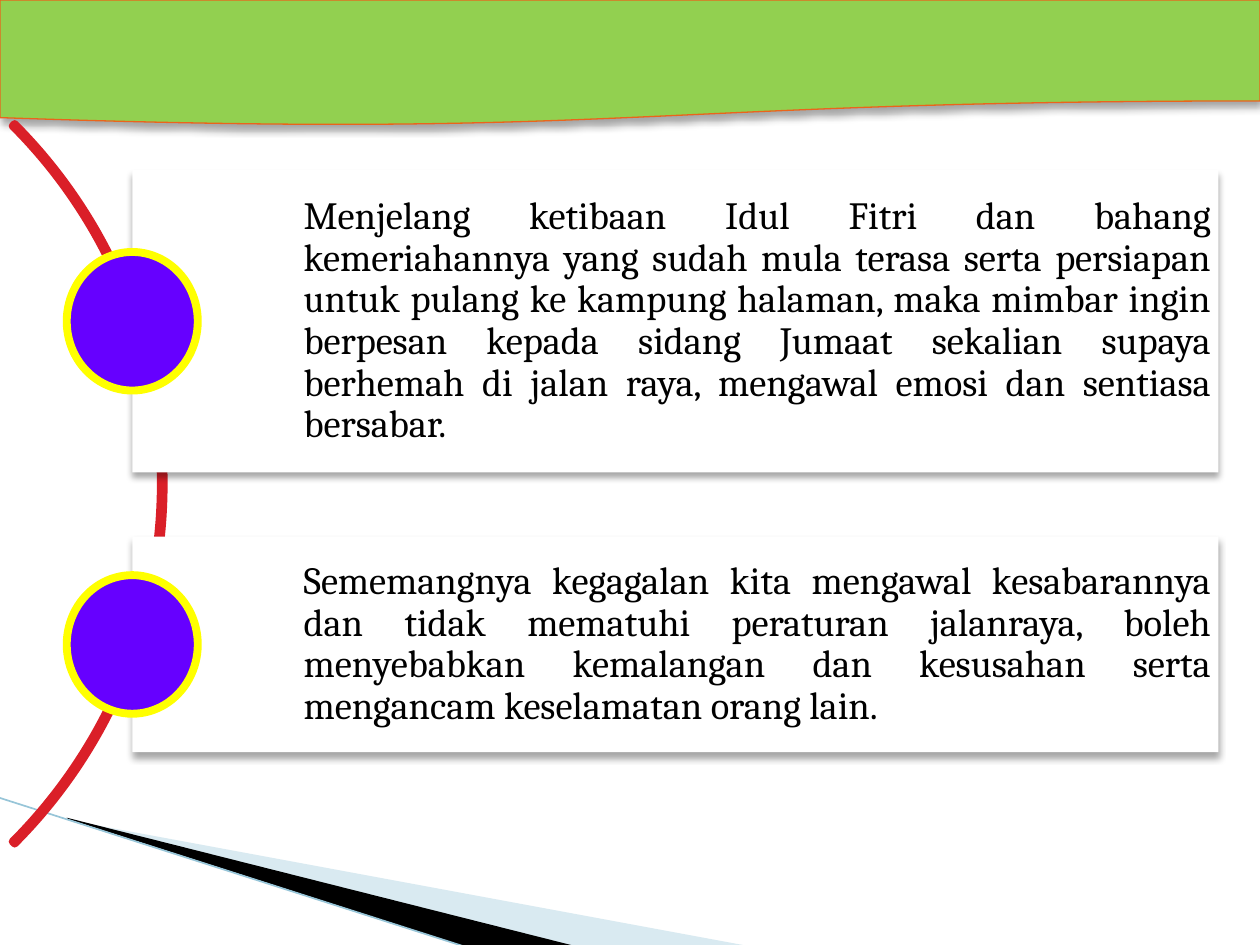
"""Build the Friday sermon slide with two road-safety messages."""
from dataclasses import dataclass

from lxml.etree import SubElement
from pptx import Presentation
from pptx.dml.color import RGBColor
from pptx.enum.shapes import MSO_CONNECTOR, MSO_SHAPE
from pptx.enum.text import MSO_ANCHOR, PP_ALIGN
from pptx.oxml.ns import qn
from pptx.shapes.autoshape import Shape
from pptx.slide import Slide
from pptx.util import Inches, Pt

COLORS = {
    "banner": "92D050", "banner_line": "EB641B", "arc": "DA1F28",
    "panel": "FFFFFF", "text": "000000", "dot": "6600FF", "ring": "FFFF00",
    "pale": "A0CBDC", "dark": "000000", "edge": "97C5D8", "shadow": "000000",
}
FRAME = {
    "word_wrap": True, "vertical_anchor": MSO_ANCHOR.MIDDLE,
    "margin_left": Inches(1.36), "margin_top": Inches(0.06),
    "margin_right": Inches(0.06), "margin_bottom": Inches(0.06),
}
PARAGRAPH = {"alignment": PP_ALIGN.JUSTIFY, "line_spacing": 0.9, "space_after": Pt(7.7)}
FONT = {"name": "Cambria", "size": Pt(22)}
PANEL_LEFT, PANEL_WIDTH = 1.05, 8.62
DOT_WIDTH, DOT_HEIGHT = 1.04, 1.1


@dataclass
class Message:
    top: float
    height: float
    text: str


@dataclass
class Wedge:
    points: list[tuple[float, float]]
    color: str
    alpha: int = 100


MESSAGES = [
    Message(1.35, 2.4, "Menjelang ketibaan Idul Fitri dan bahang kemeriahannya yang sudah "
            "mula terasa serta persiapan untuk pulang ke kampung halaman, maka mimbar ingin "
            "berpesan kepada sidang Jumaat sekalian supaya berhemah di jalan raya, mengawal "
            "emosi dan sentiasa bersabar."),
    Message(4.26, 1.71, "Sememangnya kegagalan kita mengawal kesabarannya dan tidak mematuhi "
            "peraturan jalanraya, boleh menyebabkan kemalangan dan kesusahan serta mengancam "
            "keselamatan orang lain."),
]
WEDGES = [
    Wedge([(0.55, 6.51), (5.95, 7.51), (4.56, 7.51), (0.55, 6.5)], "pale", 40),
    Wedge([(0.53, 6.49), (4.57, 7.51), (3.72, 7.52), (0.54, 6.5)], "dark"),
]


def rgb(name: str) -> RGBColor:
    """Return the named palette colour."""
    return RGBColor.from_string(COLORS[name])


def apply(target: object, values: dict) -> None:
    """Set every attribute in values on target."""
    for name, value in values.items():
        setattr(target, name, value)


def paint(sp: Shape, fill: str = "", line: str = "", width: float = 0) -> None:
    """Set fill and outline, leaving out whichever is not named."""
    sp.shadow.inherit = False
    if fill:
        sp.fill.solid()
        sp.fill.fore_color.rgb = rgb(fill)
    else:
        sp.fill.background()
    if line:
        sp.line.color.rgb = rgb(line)
        sp.line.width = Pt(width)
    else:
        sp.line.fill.background()


def add_shape(slide: Slide, kind: MSO_SHAPE, box: tuple, **style) -> Shape:
    """Add a painted preset shape at a box given in inches."""
    sp = slide.shapes.add_shape(kind, *map(Inches, box))
    paint(sp, **style)
    return sp


def drop_shadow(sp: Shape) -> None:
    """Give the shape a soft shadow straight below."""
    effects = sp._element.spPr.find(qn("a:effectLst"))
    shadow = SubElement(effects, qn("a:outerShdw"), blurRad=str(Pt(4)), dist=str(Pt(3)),
                        dir="5400000", rotWithShape="0")
    color = SubElement(shadow, qn("a:srgbClr"), val=COLORS["shadow"])
    SubElement(color, qn("a:alpha"), val="35000")


def add_wedge(slide: Slide, wedge: Wedge) -> None:
    """Draw one sliver of the corner decoration."""
    start, *rest = [(Inches(x), Inches(y)) for x, y in wedge.points]
    builder = slide.shapes.build_freeform(*start, scale=1.0)
    builder.add_line_segments(rest, close=True)
    sp = builder.convert_to_shape()
    paint(sp, fill=wedge.color)
    if wedge.alpha < 100:
        color = sp._element.spPr.find(qn("a:solidFill"))[0]
        SubElement(color, qn("a:alpha"), val=str(wedge.alpha * 1000))


def add_edge(slide: Slide) -> None:
    """Draw the thin line along the corner decoration."""
    ends = map(Inches, (-0.01, 6.33, 3.71, 7.52))
    line = slide.shapes.add_connector(MSO_CONNECTOR.STRAIGHT, *ends)
    line.line.color.rgb = rgb("edge")
    line.line.width = Pt(0.95)
    SubElement(line._element.spPr, qn("a:effectLst"))


def add_message(slide: Slide, message: Message) -> None:
    """Draw a text panel with a dot centred on its left edge."""
    box = (PANEL_LEFT, message.top, PANEL_WIDTH, message.height)
    sp = add_shape(slide, MSO_SHAPE.RECTANGLE, box, fill="panel")
    drop_shadow(sp)
    tf = sp.text_frame
    apply(tf, FRAME)
    p = tf.paragraphs[0]
    apply(p, PARAGRAPH)
    r = p.add_run()
    r.text = message.text
    apply(r.font, FONT)
    r.font.color.rgb = rgb("text")
    left = PANEL_LEFT - DOT_WIDTH / 2
    top = message.top + (message.height - DOT_HEIGHT) / 2
    add_shape(slide, MSO_SHAPE.OVAL, (left, top, DOT_WIDTH, DOT_HEIGHT),
              fill="dot", line="ring", width=4.5)


def main() -> None:
    """Build and save the slide."""
    prs = Presentation()
    prs.slide_width, prs.slide_height = Inches(10), Inches(7.5)
    slide = prs.slides.add_slide(prs.slide_layouts[6])
    for wedge in WEDGES:
        add_wedge(slide, wedge)
    add_edge(slide)
    banner = add_shape(slide, MSO_SHAPE.FLOWCHART_DOCUMENT, (0, 0, 10, 1),
                       fill="banner", line="banner_line", width=0.75)
    drop_shadow(banner)
    arc = add_shape(slide, MSO_SHAPE.BLOCK_ARC, (-6.78, -0.2, 8.08, 8.08),
                    line="arc", width=4.33)
    for i, value in enumerate((189, 27, 0.003)):
        arc.adjustments[i] = value
    for message in MESSAGES:
        add_message(slide, message)
    prs.save("out.pptx")


if __name__ == "__main__":
    main()
